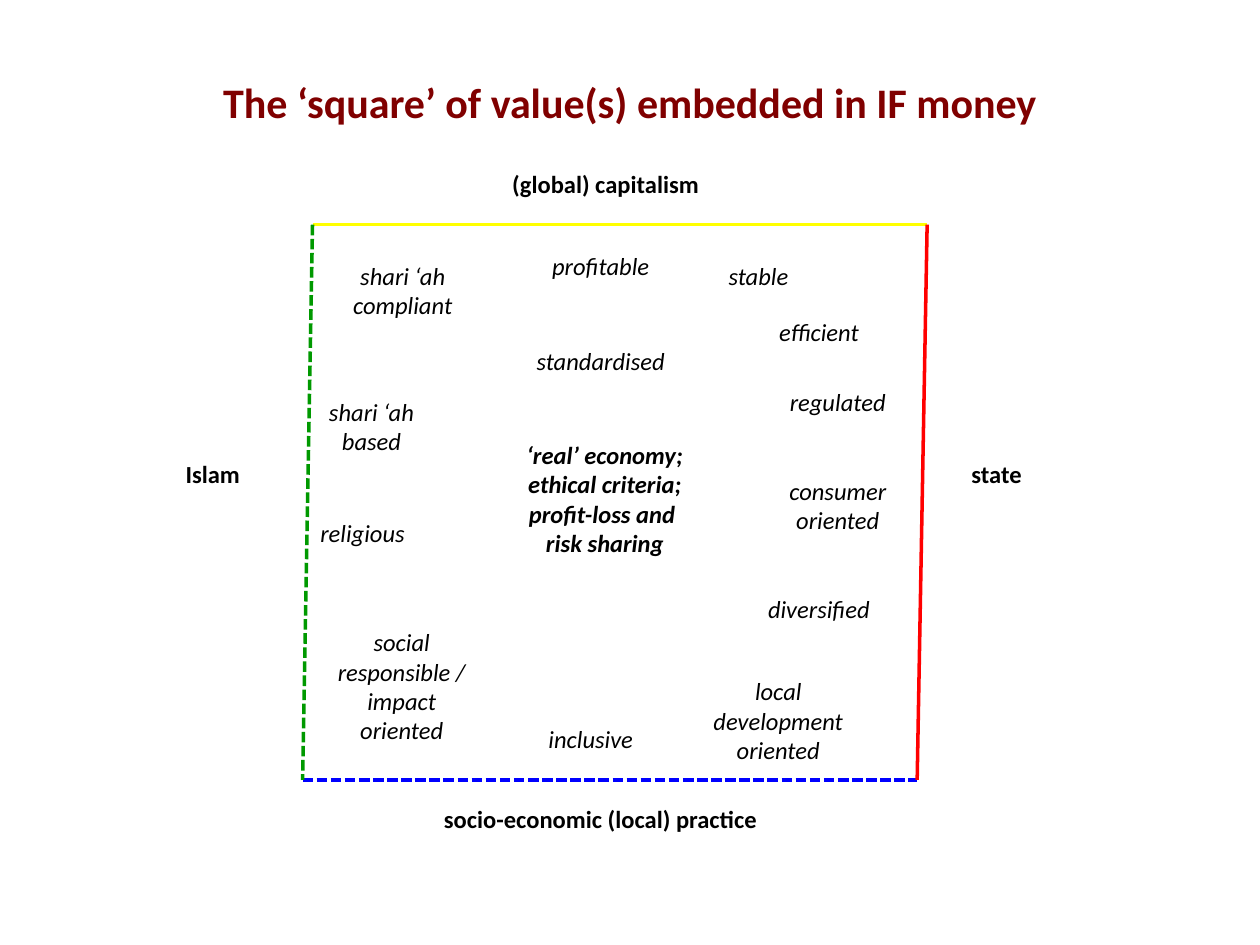
import pptx
import pptx.dml.color
import pptx.enum.dml
import pptx.enum.shapes
import pptx.enum.text
import pptx.util
from pptx.util import Cm

COLORS = {"title": "800000", "text": "000000", "capitalism": "FFFF00",
          "practice": "0000FF", "islam": "009900", "state": "FF0000"}
FONT = "Calibri"
TITLE = "The ‘square’ of value(s) embedded in IF money"
LABEL_WIDTH = 3.6
LINE_HEIGHT = 0.6
VERTICAL_INSETS = 0.26

CORNERS = {"top left": (6.3, 4.53), "top right": (18.69, 4.53),
           "bottom left": (6.1, 15.72), "bottom right": (18.49, 15.72)}
SIDES = [
    ("top left", "top right", "capitalism", False),
    ("bottom left", "bottom right", "practice", True),
    ("top left", "bottom left", "islam", True),
    ("top right", "bottom right", "state", False),
]
POLES = [
    ("socio-economic (local) practice", 8.51, 16.08, 7.19, 1),
    ("(global) capitalism", 9.91, 3.28, 4.6, 1),
    ("Islam", 2.49, 9.12, LABEL_WIDTH, 1),
    ("state", 18.29, 9.12, LABEL_WIDTH, 1),
]
CORE = [("‘real’ economy;\nethical criteria;\nprofit-loss and \nrisk sharing", 9.3, 8.74, 5.79, 4)]
VALUES = [
    ("profitable", 10.31, 4.93, LABEL_WIDTH, 1),
    ("inclusive", 10.11, 14.48, LABEL_WIDTH, 1),
    ("local development\noriented", 13.89, 13.51, LABEL_WIDTH, 3),
    ("social responsible /\nimpact oriented", 6.3, 12.52, LABEL_WIDTH, 4),
    ("shari ‘ah\ncompliant", 6.32, 5.13, LABEL_WIDTH, 2),
    ("shari ‘ah\nbased", 5.69, 7.87, LABEL_WIDTH, 2),
    ("efficient", 14.71, 6.27, LABEL_WIDTH, 1),
    ("regulated", 15.09, 7.67, LABEL_WIDTH, 1),
    ("standardised", 10.31, 6.86, LABEL_WIDTH, 1),
    ("religious", 5.51, 10.31, LABEL_WIDTH, 1),
    ("diversified", 14.71, 11.86, LABEL_WIDTH, 1),
    ("consumer\noriented", 15.09, 9.47, LABEL_WIDTH, 2),
    ("stable", 13.49, 5.13, LABEL_WIDTH, 1),
]
GROUPS = [(POLES, True, False), (CORE, True, True), (VALUES, False, True)]


def rgb(name):
    return pptx.dml.color.RGBColor.from_string(COLORS[name])


def write_text(text_frame, text, size, color, bold, italic):
    text_frame.text = text
    text_frame.word_wrap = True
    for paragraph in text_frame.paragraphs:
        paragraph.alignment = pptx.enum.text.PP_ALIGN.CENTER
        paragraph.font.name = FONT
        paragraph.font.size = pptx.util.Pt(size)
        paragraph.font.bold = bold
        paragraph.font.italic = italic
        paragraph.font.color.rgb = rgb(color)


def add_title(slide):
    title = slide.shapes.title
    title.left, title.top, title.width, title.height = Cm(1.27), Cm(0.76), Cm(22.86), Cm(2.57)
    title.text_frame.vertical_anchor = pptx.enum.text.MSO_ANCHOR.MIDDLE
    write_text(title.text_frame, TITLE, 24, "title", True, False)


def add_side(slide, start, end, color, dashed):
    points = [Cm(length) for length in CORNERS[start] + CORNERS[end]]
    side = slide.shapes.add_connector(pptx.enum.shapes.MSO_CONNECTOR.STRAIGHT, *points)
    side.line.color.rgb = rgb(color)
    side.line.width = pptx.util.Pt(2)
    if dashed:
        side.line.dash_style = pptx.enum.dml.MSO_LINE.SQUARE_DOT
    side._element.spPr.append(pptx.oxml.parse_xml(
        '<a:effectLst xmlns:a="http://schemas.openxmlformats.org/drawingml/2006/main"/>'))


def add_label(slide, text, left, top, width, lines, bold, italic):
    height = VERTICAL_INSETS + LINE_HEIGHT * lines
    label = slide.shapes.add_textbox(Cm(left), Cm(top), Cm(width), Cm(height))
    write_text(label.text_frame, text, 14, "text", bold, italic)
    label.text_frame.auto_size = pptx.enum.text.MSO_AUTO_SIZE.SHAPE_TO_FIT_TEXT


def main():
    """Build the slide with the square of values."""
    presentation = pptx.Presentation()
    presentation.slide_width, presentation.slide_height = Cm(25.4), Cm(19.05)
    slide = presentation.slides.add_slide(presentation.slide_layouts[5])
    add_title(slide)
    for side in SIDES:
        add_side(slide, *side)
    for labels, bold, italic in GROUPS:
        for label in labels:
            add_label(slide, *label, bold, italic)
    presentation.save("out.pptx")


if __name__ == "__main__":
    main()
